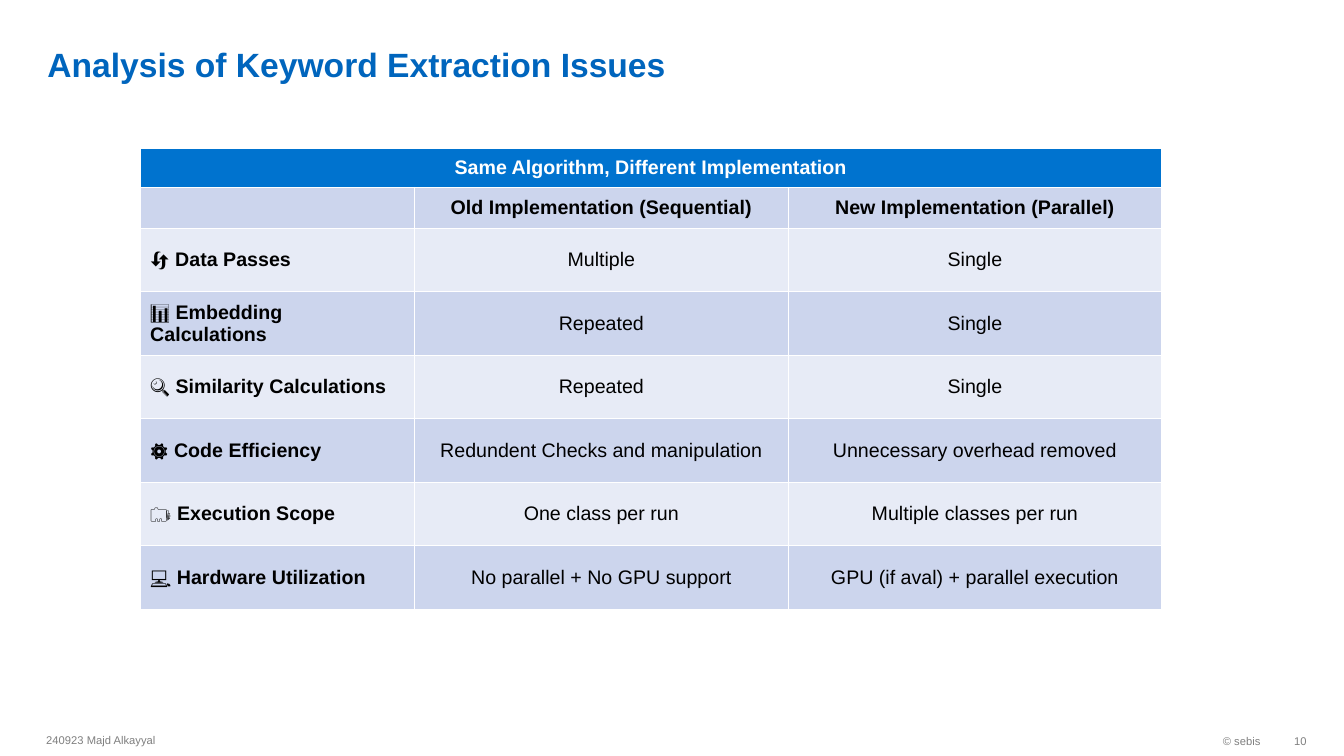
from pptx import Presentation
from pptx.dml.color import RGBColor
from pptx.enum.text import MSO_ANCHOR, PP_ALIGN
from pptx.util import Pt

LEFT, MID, RIGHT = PP_ALIGN.LEFT, PP_ALIGN.CENTER, PP_ALIGN.RIGHT
CENTER, BOTTOM = MSO_ANCHOR.MIDDLE, MSO_ANCHOR.BOTTOM
PX = 9144
HUES = {
    "title": "0065BD",
    "head": "0073CF",
    "dark": "CCD5ED",
    "light": "E7EBF6",
    "white": "FFFFFF",
    "black": "000000",
    "gray": "7F7F7F",
}


def write(para, text, size=14, hue="black", bold=False, align=LEFT):
    para.alignment = align
    run = para.add_run()
    run.text = text
    font = run.font
    font.name = "Arial"
    font.size = Pt(size)
    font.bold = bold
    font.color.rgb = RGBColor.from_string(HUES[hue])


deck = Presentation()
deck.slide_width = 1333 * PX
deck.slide_height = 750 * PX
slide = deck.slides.add_slide(deck.slide_layouts[5])

title = slide.shapes.title
title.left, title.top, title.width, title.height = [n * PX for n in (37, 5, 1158, 79)]
frame = title.text_frame
frame.word_wrap = True
frame.vertical_anchor = BOTTOM
frame.margin_top = frame.margin_bottom = 0
frame.paragraphs[0].line_spacing = 1.15
write(frame.paragraphs[0], "Analysis of Keyword Extraction Issues", size=24, hue="title", bold=True)

heads = ["Old Implementation (Sequential)", "New Implementation (Parallel)"]
rows = [
    ("🔄", "Data Passes", "Multiple", "Single"),
    ("📊", "Embedding Calculations", "Repeated", "Single"),
    ("🔍", "Similarity Calculations", "Repeated", "Single"),
    ("⚙️", "Code Efficiency", "Redundent Checks and manipulation", "Unnecessary overhead removed"),
    ("🗂️", "Execution Scope", "One class per run", "Multiple classes per run"),
    ("💻", "Hardware Utilization", "No parallel + No GPU support", "GPU (if aval) + parallel execution"),
]
widths = [272, 371, 370]
heights = [39, 39] + [63] * len(rows)
table = slide.shapes.add_table(
    len(heights), len(widths), 139 * PX, 147 * PX, sum(widths) * PX, sum(heights) * PX
).table
for col, width in zip(table.columns, widths):
    col.width = width * PX
for num, height in enumerate(heights):
    table.rows[num].height = height * PX
    band = "head" if num == 0 else "dark" if num % 2 else "light"
    for cell in table.rows[num].cells:
        cell.fill.solid()
        cell.fill.fore_color.rgb = RGBColor.from_string(HUES[band])
        cell.vertical_anchor = CENTER

table.cell(0, 0).merge(table.cell(0, 2))
write(
    table.cell(0, 0).text_frame.paragraphs[0],
    "Same Algorithm, Different Implementation",
    hue="white", bold=True, align=MID,
)
for col, head in enumerate(heads, 1):
    write(table.cell(1, col).text_frame.paragraphs[0], head, bold=True, align=MID)
for num, (icon, label, *vals) in enumerate(rows, 2):
    para = table.cell(num, 0).text_frame.paragraphs[0]
    write(para, icon + " ")
    write(para, label, bold=True)
    for col, val in enumerate(vals, 1):
        write(table.cell(num, col).text_frame.paragraphs[0], val, align=MID)

notes = [
    ("© sebis", 1026, 719, 234, RIGHT, 10),
    ("10", 1260, 719, 36, RIGHT, 0),
    ("240923 Majd Alkayyal", 36, 718, 630, LEFT, 10),
]
for text, left, top, width, align, inset in notes:
    box = slide.shapes.add_textbox(left * PX, top * PX, width * PX, 32 * PX)
    frame = box.text_frame
    frame.word_wrap = True
    frame.vertical_anchor = CENTER
    frame.margin_right = inset * PX
    write(frame.paragraphs[0], text, size=8, hue="gray", align=align)

deck.save("out.pptx")
